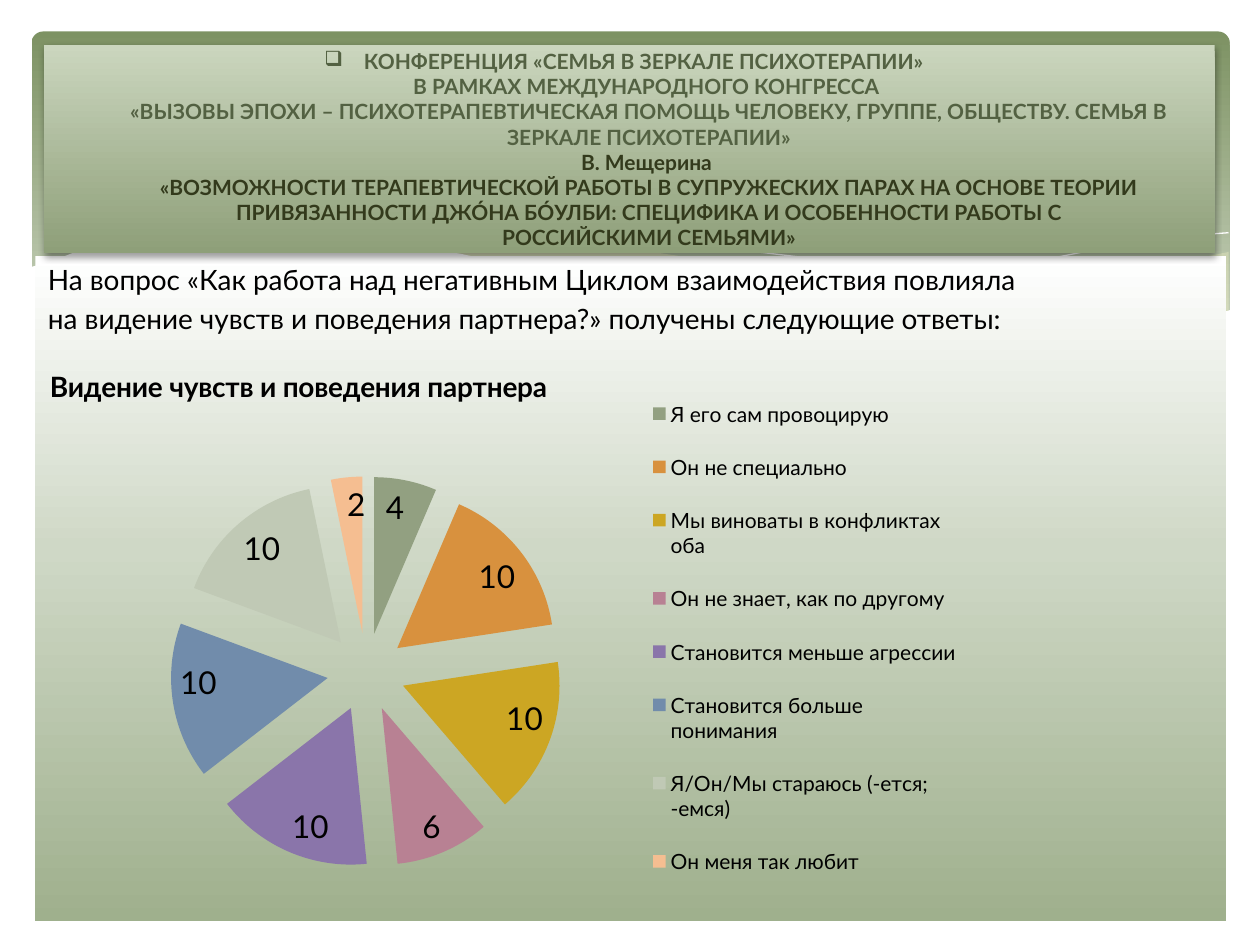
from copy import deepcopy

from lxml import etree
from pptx import Presentation
from pptx.chart.data import CategoryChartData
from pptx.dml.color import RGBColor
from pptx.enum.chart import XL_CHART_TYPE, XL_LABEL_POSITION, XL_LEGEND_POSITION
from pptx.enum.shapes import MSO_SHAPE
from pptx.enum.text import MSO_ANCHOR, MSO_AUTO_SIZE, PP_ALIGN
from pptx.oxml import parse_xml
from pptx.oxml.ns import nsdecls, qn
from pptx.util import Pt

PIE = XL_CHART_TYPE.PIE_EXPLODED
INSIDE_END = XL_LABEL_POSITION.INSIDE_END
RIGHT = XL_LEGEND_POSITION.RIGHT
ROUNDED = MSO_SHAPE.ROUNDED_RECTANGLE
TOP, MIDDLE = MSO_ANCHOR.TOP, MSO_ANCHOR.MIDDLE
CENTER, LEFT = PP_ALIGN.CENTER, PP_ALIGN.LEFT
NO_FIT = MSO_AUTO_SIZE.NONE

FONT = "Lato"
COLORS = {"white": "FFFFFF", "black": "000000", "wave": "FEFAC9",
          "conference": "536142", "talk": "333A1C"}
FRAME_STOPS = [(0, "7D9263"), (0.9, "C9D3BE")]
BODY_STOPS = [(0, "FFFFFF"), (0.44, "CFD8C6"), (1, "9FB08D")]
TITLE_STOPS = [(0, "CBD6BE"), (1, "8E9F79")]

# Wave outlines: points, fill colour, opacity in percent
WAVES = [
    ([(702, 144), (620, 161), (543, 178), (476, 191), (527, 198), (578, 200),
      (623, 198), (663, 191), (702, 178)], "wave", 29),
    ([(643, 197), (580, 187), (508, 173), (453, 160), (400, 148), (352, 141),
      (302, 135), (260, 133), (225, 135), (206, 138), (246, 143), (291, 152),
      (354, 167), (420, 181), (479, 192), (541, 198), (596, 200)], "wave", 40),
    ([(222, 140), (247, 137), (289, 135), (338, 135), (400, 140), (458, 147),
      (523, 158), (572, 168), (626, 183), (653, 196)], None, 100),
    ([(441, 185), (500, 169), (559, 156), (624, 143), (675, 135), (702, 133)],
     None, 100),
    ([(703.4, 177), (670, 188), (639, 194), (603, 198), (571, 199), (523, 197),
      (481, 193), (434, 183), (381, 172), (322, 158), (263, 145), (210, 137),
      (166, 133), (127, 132), (95, 134), (68, 137), (48, 142), (33, 148),
      (16.6, 153), (16.6, 237), (703.4, 237)], "white", 100),
]

TITLE_RUNS = [
    ("conference", ["КОНФЕРЕНЦИЯ «СЕМЬЯ В ЗЕРКАЛЕ ПСИХОТЕРАПИИ»  ",
                    "В РАМКАХ МЕЖДУНАРОДНОГО КОНГРЕССА ",
                    "«ВЫЗОВЫ ЭПОХИ – ПСИХОТЕРАПЕВТИЧЕСКАЯ ПОМОЩЬ ЧЕЛОВЕКУ, ГРУППЕ, "
                    "ОБЩЕСТВУ. СЕМЬЯ В ЗЕРКАЛЕ ПСИХОТЕРАПИИ»"]),
    ("talk", ["В. Мещерина ",
              "«ВОЗМОЖНОСТИ ТЕРАПЕВТИЧЕСКОЙ РАБОТЫ В СУПРУЖЕСКИХ ПАРАХ НА ОСНОВЕ ТЕОРИИ",
              "ПРИВЯЗАННОСТИ ДЖО́НА БО́УЛБИ: СПЕЦИФИКА И ОСОБЕННОСТИ РАБОТЫ С",
              "РОССИЙСКИМИ СЕМЬЯМИ»"]),
]
BODY_LINES = [
    "На вопрос «Как работа над негативным Циклом взаимодействия повлияла",
    "на видение чувств и поведения партнера?» получены следующие ответы:",
]
CHART_TITLE = "Видение чувств и поведения партнера"
ANSWERS = [  # answer, count, slice colour
    ("Я его сам провоцирую", 4, "92A081"),
    ("Он не специально", 10, "D8913E"),
    ("Мы виноваты в конфликтах оба", 10, "CCA623"),
    ("Он не знает, как по другому", 6, "B88193"),
    ("Становится меньше агрессии", 10, "8A75AA"),
    ("Становится больше понимания", 10, "718CAB"),
    ("Я/Он/Мы стараюсь (-ется; -емся)", 10, "C0C9B5"),
    ("Он меня так любит", 2, "F5BE91"),
]


def apply_format(target, values):
    for name, value in values.items():
        setattr(target, name, value)


def format_font(font, size, color, bold=False):
    apply_format(font, {"name": FONT, "size": Pt(size), "bold": bold})
    font.color.rgb = RGBColor.from_string(color)


def place(shape, left, top, width, height):
    apply_format(shape, {"left": Pt(left), "top": Pt(top),
                         "width": Pt(width), "height": Pt(height)})


def fill_gradient(shape, stops):
    """Fill from top to bottom with (position, colour) stops."""
    shape.fill.gradient()
    shape.fill.gradient_angle = 270
    stop_list = shape._element.spPr.find(qn("a:gradFill")).find(qn("a:gsLst"))
    while len(stop_list) < len(stops):
        stop_list.append(deepcopy(stop_list[-1]))
    for stop, (position, color) in zip(shape.fill.gradient_stops, stops):
        stop.position = position
        stop.color.rgb = RGBColor.from_string(color)


def add_frame(slide):
    frame = slide.shapes.add_shape(ROUNDED, Pt(18), Pt(18), Pt(684.7), Pt(194.4))
    frame.adjustments[0] = 0.034
    frame.shadow.inherit = False
    frame.line.fill.background()
    fill_gradient(frame, FRAME_STOPS)


def add_wave(slide, points, color, opacity):
    corners = [(Pt(x), Pt(y)) for x, y in points]
    builder = slide.shapes.build_freeform(*corners[0])
    builder.add_line_segments(corners[1:], close=color is not None)
    wave = builder.convert_to_shape()
    wave.shadow.inherit = False
    if color is None:
        wave.fill.background()
        wave.line.color.rgb = RGBColor.from_string(COLORS["white"])
        wave.line.width = Pt(0)
        return
    wave.line.fill.background()
    wave.fill.solid()
    wave.fill.fore_color.rgb = RGBColor.from_string(COLORS[color])
    if opacity < 100:
        rgb = wave._element.spPr.find(".//" + qn("a:srgbClr"))
        etree.SubElement(rgb, qn("a:alpha"), val=str(opacity * 1000))


def set_bullet(paragraph, character=None, indent=0):
    properties = paragraph._p.get_or_add_pPr()
    properties.set("marL", str(Pt(indent)))
    properties.set("indent", str(-Pt(indent)))
    if character:
        etree.SubElement(properties, qn("a:buChar"), char=character)
    else:
        etree.SubElement(properties, qn("a:buNone"))


def fill_body(slide, body):
    slide.shapes._spTree.append(body._element)  # bring in front of the waves
    place(body, 20.2, 146.2, 680.4, 380.2)
    fill_gradient(body, BODY_STOPS)
    frame = body.text_frame
    apply_format(frame, {"auto_size": NO_FIT, "vertical_anchor": TOP, "word_wrap": True})
    for index, line in enumerate(BODY_LINES):
        paragraph = frame.add_paragraph() if index else frame.paragraphs[0]
        apply_format(paragraph, {"alignment": LEFT, "space_before": Pt(3.2 if index else 0)})
        set_bullet(paragraph)
        run = paragraph.add_run()
        run.text = line
        format_font(run.font, 16, COLORS["black"])


def fill_title(slide, title):
    slide.shapes._spTree.append(title._element)
    place(title, 25.2, 25.9, 668.9, 118.8)
    fill_gradient(title, TITLE_STOPS)
    title._element.spPr.append(parse_xml(
        f'<a:effectLst {nsdecls("a")}><a:outerShdw blurRad="{Pt(4)}" dist="{Pt(2)}" '
        'dir="5400000" rotWithShape="0"><a:srgbClr val="000000"><a:alpha val="38000"/>'
        '</a:srgbClr></a:outerShdw></a:effectLst>'))
    frame = title.text_frame
    apply_format(frame, {"auto_size": NO_FIT, "vertical_anchor": MIDDLE, "word_wrap": True})
    paragraph = frame.paragraphs[0]
    paragraph.alignment = CENTER
    set_bullet(paragraph, "❑", 22.5)
    lines = [(line, color) for color, group in TITLE_RUNS for line in group]
    for index, (line, color) in enumerate(lines):
        if index:
            paragraph.add_line_break()
        run = paragraph.add_run()
        run.text = line
        format_font(run.font, 12, COLORS[color], True)
    # Line breaks take the size of the text
    for line_break in paragraph._p.findall(qn("a:br")):
        line_break.insert(0, deepcopy(run.font._element))


def set_layout(element, index, inner=False, **fractions):
    """Place a chart part by fractions of the chart area."""
    for old in element.findall(qn("c:layout")):
        element.remove(old)
    layout = etree.Element(qn("c:layout"))
    manual = etree.SubElement(layout, qn("c:manualLayout"))
    if inner:
        etree.SubElement(manual, qn("c:layoutTarget"), val="inner")
    for mode in ("xMode", "yMode"):
        etree.SubElement(manual, qn("c:" + mode), val="edge")
    for name, value in fractions.items():
        etree.SubElement(manual, qn("c:" + name), val=str(value))
    element.insert(index, layout)


def add_answers_chart(slide):
    data = CategoryChartData()
    data.categories = [answer for answer, _, _ in ANSWERS]
    data.add_series("Series 1", [count for _, count, _ in ANSWERS])
    chart = slide.shapes.add_chart(PIE, Pt(20.2), Pt(196.6), Pt(532.8), Pt(329), data).chart
    format_font(chart.font, 18, COLORS["black"])

    # Slices and labels
    plot = chart.plots[0]
    plot.vary_by_categories = True
    series = plot.series[0]
    for old in series._element.findall(qn("c:explosion")):
        series._element.remove(old)
    explosion = etree.Element(qn("c:explosion"), val="25")
    series._element.find(qn("c:tx")).addnext(explosion)
    for index, (_, _, color) in enumerate(ANSWERS):
        fill = series.points[index].format.fill
        fill.solid()
        fill.fore_color.rgb = RGBColor.from_string(color)
    plot.has_data_labels = True
    apply_format(plot.data_labels, {"show_value": True, "show_percentage": False,
                                    "position": INSIDE_END})
    format_font(plot.data_labels.font, 18, COLORS["black"])
    set_layout(chart._chartSpace.chart.plotArea, 0, True, x=0.06, y=0.23, w=0.59, h=0.68)

    # Title and legend
    chart.has_title = True
    run = chart.chart_title.text_frame.paragraphs[0].add_run()
    run.text = CHART_TITLE
    format_font(run.font, 16, COLORS["black"], True)
    set_layout(chart.chart_title._element, 1, x=0.01, y=0.03)
    chart.has_legend = True
    apply_format(chart.legend, {"position": RIGHT, "include_in_layout": False})
    format_font(chart.legend.font, 12, COLORS["black"])
    set_layout(chart.legend._element, 1, x=0.66, y=0.05, w=0.33, h=0.92)


def main():
    presentation = Presentation()
    apply_format(presentation, {"slide_width": Pt(720), "slide_height": Pt(540)})
    slide = presentation.slides.add_slide(presentation.slide_layouts[1])
    add_frame(slide)
    for points, color, opacity in WAVES:
        add_wave(slide, points, color, opacity)
    fill_body(slide, slide.placeholders[1])
    fill_title(slide, slide.shapes.title)
    add_answers_chart(slide)
    presentation.save("out.pptx")


if __name__ == "__main__":
    main()
